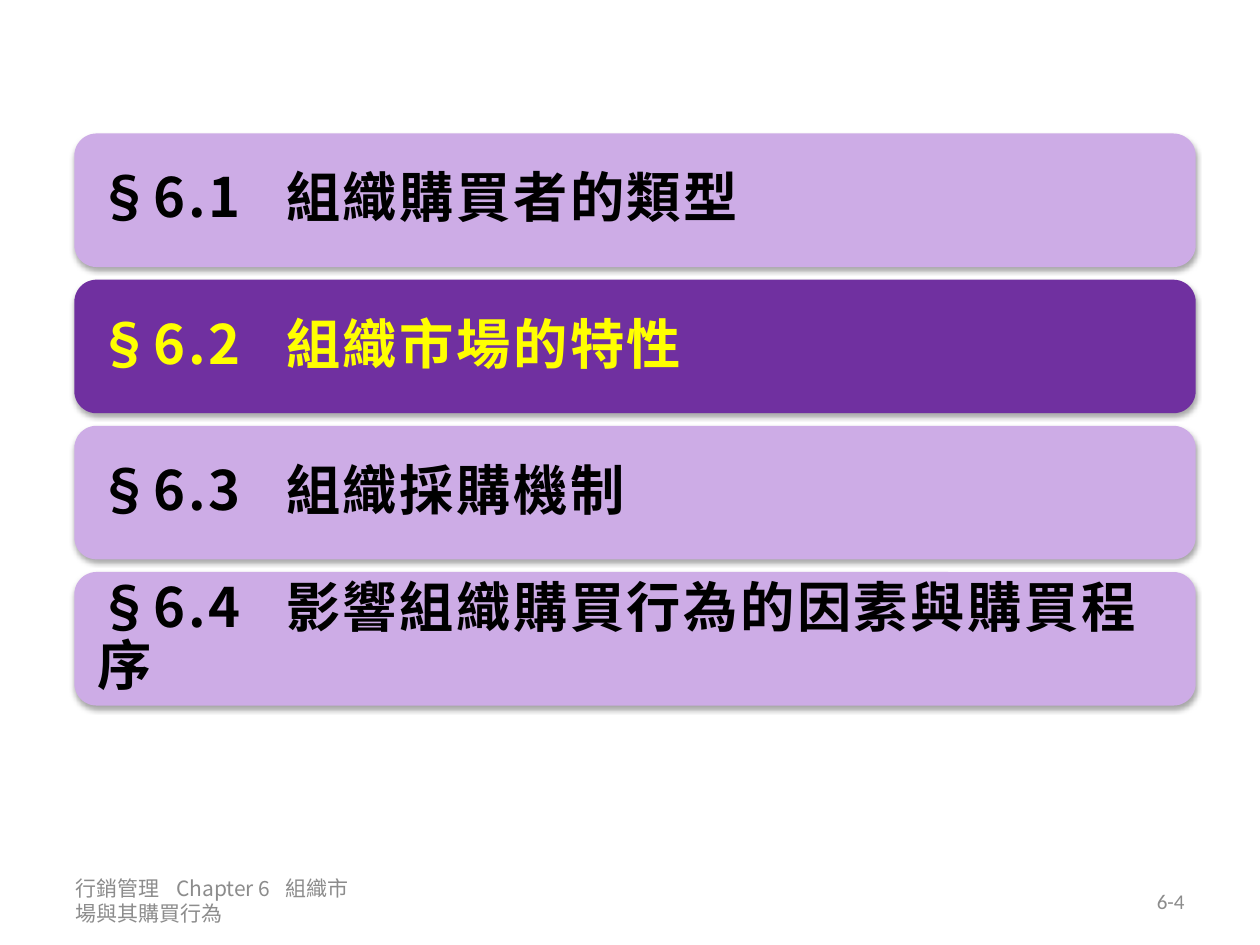
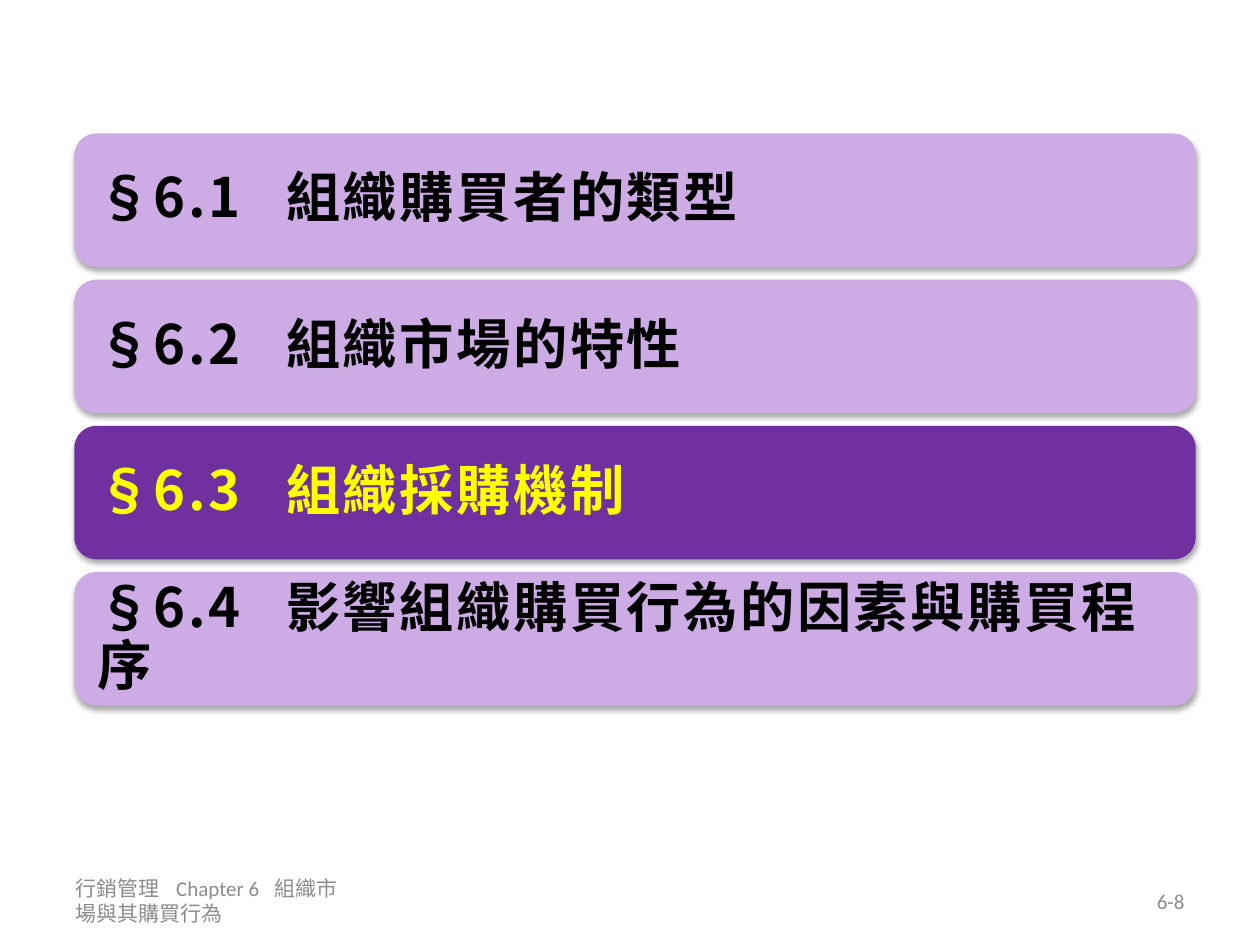
from lxml.etree import SubElement
from pptx import Presentation
from pptx.dml.color import RGBColor
from pptx.enum.shapes import MSO_SHAPE
from pptx.enum.text import MSO_ANCHOR, PP_ALIGN
from pptx.oxml.ns import qn
from pptx.util import Inches, Pt

LILAC = RGBColor(0xCD, 0xAC, 0xE6)
PURPLE = RGBColor(0x70, 0x30, 0xA0)
YELLOW = RGBColor(0xFF, 0xFF, 0x00)
BLACK = RGBColor(0x00, 0x00, 0x00)
GREY = RGBColor(0x8C, 0x8C, 0x8C)

CJK = "Noto Sans CJK SC"
LATIN = "Calibri"

SECTIONS = [
    "§6.1\t組織購買者的類型",
    "§6.2\t組織市場的特性",
    "§6.3\t組織採購機制",
    "§6.4\t影響組織購買行為的因素與購買程序",
]
FOOTER = "行銷管理\tChapter 6\t組織市場與其購買行為"

# Agenda box and its row pitch, in inches
AGENDA = (0.59, 1.06, 8.9, 4.54)
ROW_GAP = 0.1
FOOTER_TOP, FOOTER_HEIGHT = 6.95, 0.4


def write(tf, text, size, color, latin=CJK, tabs=(), bold=False, spacing=0):
    """Fill a frame with one paragraph; tabs are in inches, spacing in points."""
    tf.word_wrap = True
    tf.vertical_anchor = MSO_ANCHOR.MIDDLE
    p = tf.paragraphs[0]
    p.text = text
    p.alignment = PP_ALIGN.LEFT
    if tabs:
        tab_list = SubElement(p._p.get_or_add_pPr(), qn("a:tabLst"))
        for pos in tabs:
            SubElement(tab_list, qn("a:tab"), pos=str(Inches(pos)), algn="l")
    font = p.font
    font.size, font.bold, font.name = Pt(size), bold, latin
    font.color.rgb = color
    SubElement(font._element, qn("a:ea"), typeface=CJK)
    if spacing:
        font._element.set("spc", str(int(spacing * 100)))
    return p


def add_shadow(sp):
    sp.shadow.inherit = False
    effects = sp._element.spPr.find(qn("a:effectLst"))
    shadow = SubElement(effects, qn("a:outerShdw"), blurRad=str(Pt(3.1)),
                        dist=str(Pt(1.8)), dir="5400000", rotWithShape="0")
    color = SubElement(shadow, qn("a:srgbClr"), val=str(BLACK))
    SubElement(color, qn("a:alpha"), val="35000")


def add_agenda(slide, box, current):
    """Stack one bar per section in the box and highlight the current one."""
    left, top, width, height = box
    bar_height = (height - ROW_GAP * (len(SECTIONS) - 1)) / len(SECTIONS)
    for row, section in enumerate(SECTIONS):
        sp = slide.shapes.add_shape(
            MSO_SHAPE.ROUNDED_RECTANGLE, Inches(left),
            Inches(top + row * (bar_height + ROW_GAP)),
            Inches(width), Inches(bar_height))
        active = row == current
        sp.fill.solid()
        sp.fill.fore_color.rgb = PURPLE if active else LILAC
        sp.line.fill.background()
        add_shadow(sp)
        tf = sp.text_frame
        tf.margin_left = tf.margin_right = Inches(0.13)
        tf.margin_top = tf.margin_bottom = Inches(0.13)
        p = write(tf, section, 31, YELLOW if active else BLACK,
                  tabs=[1.5], bold=True, spacing=1.5)
        p.line_spacing = 0.9


def add_footer(slide, page, width, latin, tabs):
    """Chapter name at the left, page number at the right."""
    def text_box(left, box_width):
        return slide.shapes.add_textbox(
            Inches(left), Inches(FOOTER_TOP), Inches(box_width),
            Inches(FOOTER_HEIGHT)).text_frame

    write(text_box(0.5, width), FOOTER, 12, GREY, latin, tabs)
    number = write(text_box(7.17, 2.33), page, 12, GREY, LATIN)
    number.alignment = PP_ALIGN.RIGHT


def add_section_slide(prs, current, page, footer_width, footer_font, tabs):
    slide = prs.slides.add_slide(prs.slide_layouts[6])
    add_footer(slide, page, footer_width, footer_font, tabs)
    add_agenda(slide, AGENDA, current)


def main():
    prs = Presentation()
    prs.slide_width, prs.slide_height = Inches(10), Inches(7.5)
    add_section_slide(prs, 1, "6-4", 2.45, CJK, [0.8, 1.67])
    add_section_slide(prs, 2, "6-8", 2.33, LATIN, [0.8, 1.58])
    prs.save("out.pptx")


if __name__ == "__main__":
    main()
